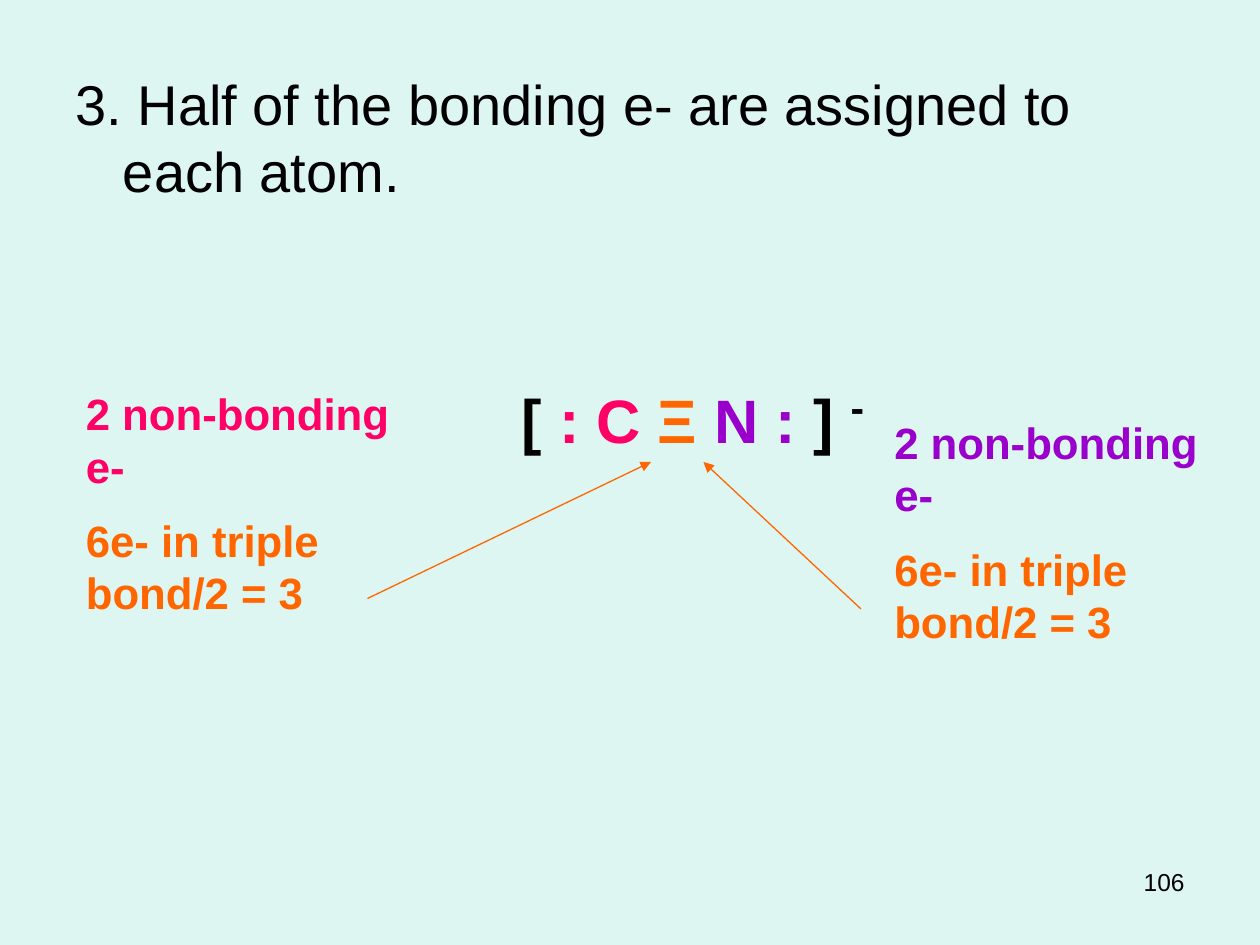
from pptx import Presentation
from pptx.dml.color import RGBColor
from pptx.enum.shapes import MSO_CONNECTOR
from pptx.enum.text import MSO_AUTO_SIZE, PP_ALIGN
from pptx.oxml.ns import qn
from pptx.util import Pt
from lxml.etree import SubElement

COLORS = {
    "background": "DEF6F1",
    "text": "000000",
    "carbon": "FF0066",
    "bond": "FF6600",
    "nitrogen": "9900CC",
}


def add_run(paragraph, text, size, color="text", bold=False):
    """Append one formatted run and return it."""
    run = paragraph.add_run()
    run.text = text
    run.font.name = "Arial"
    run.font.size = Pt(size)
    run.font.bold = bold
    run.font.color.rgb = RGBColor.from_string(COLORS[color])
    return run


def set_indent(paragraph, margin, indent):
    """Give a paragraph a left margin and first-line indent, without a bullet."""
    properties = paragraph._p.get_or_add_pPr()
    properties.set("marL", str(Pt(margin)))
    properties.set("indent", str(Pt(indent)))
    SubElement(properties, qn("a:buNone"))


def fill_body(slide, left, top, width, height):
    """Write the rule and the cyanide formula in the body placeholder."""
    body = slide.placeholders[1]
    body.left, body.top, body.width, body.height = map(Pt, (left, top, width, height))
    frame = body.text_frame
    frame.auto_size = MSO_AUTO_SIZE.NONE

    rule = frame.paragraphs[0]
    rule.space_before = Pt(6.4)
    set_indent(rule, 27, -27)
    add_run(rule, "3. Half of the bonding e- are assigned to each atom.", 32)

    formula = frame.add_paragraph()
    formula.level = 2
    formula.alignment = PP_ALIGN.CENTER
    formula.space_before = Pt(97)
    set_indent(formula, 90, -18)
    for text, color in (("[ ", "text"), (": C ", "carbon"), ("Ξ ", "bond"),
                        ("N :", "nitrogen"), (" ] ", "text")):
        add_run(formula, text, 35, color, bold=True)
    charge = add_run(formula, "-", 40, bold=True)
    charge.font._element.set("baseline", "30000")


def add_text_box(slide, left, top, width, height):
    """Add a wrapping text box and return its text frame."""
    shape = slide.shapes.add_textbox(Pt(left), Pt(top), Pt(width), Pt(height))
    shape.text_frame.word_wrap = True
    return shape.text_frame


def add_electron_count(slide, left, top, width, height, color):
    """List the electrons assigned to one atom."""
    frame = add_text_box(slide, left, top, width, height)
    lone_pair, bonding = frame.paragraphs[0], frame.add_paragraph()
    add_run(lone_pair, "2 non-bonding e-", 25, color, bold=True)
    add_run(bonding, "6e- in triple bond/2 = 3", 25, "bond", bold=True)
    for paragraph in frame.paragraphs:
        paragraph.space_before = Pt(12.5)


def add_bond_arrow(slide, start, end):
    """Draw an arrow from an electron count to the triple bond."""
    arrow = slide.shapes.add_connector(MSO_CONNECTOR.STRAIGHT, *map(Pt, start + end))
    arrow.line.color.rgb = RGBColor.from_string(COLORS["bond"])
    arrow.line.width = Pt(0.75)
    SubElement(arrow.line._get_or_add_ln(), qn("a:tailEnd"), type="triangle")
    SubElement(arrow._element.spPr, qn("a:effectLst"))


def add_slide_number(slide, left, top, width, height):
    """Place the slide number at the bottom right."""
    paragraph = add_text_box(slide, left, top, width, height).paragraphs[0]
    paragraph.alignment = PP_ALIGN.RIGHT
    add_run(paragraph, "106", 14)


def main():
    """Build the slide and save it."""
    presentation = Presentation()
    presentation.slide_width, presentation.slide_height = Pt(720), Pt(540)
    slide = presentation.slides.add_slide(presentation.slide_layouts[1])
    slide.background.fill.solid()
    slide.background.fill.fore_color.rgb = RGBColor.from_string(COLORS["background"])
    title = slide.shapes.title._element
    title.getparent().remove(title)

    add_slide_number(slide, 516, 492, 168, 37.5)
    fill_body(slide, 36, 36, 648, 446.4)
    add_electron_count(slide, 42, 217.5, 216, 142.5, "carbon")
    add_electron_count(slide, 504, 234, 216, 142.5, "nitrogen")
    add_bond_arrow(slide, (210, 342), (372, 264))
    add_bond_arrow(slide, (492, 348), (402, 264))
    presentation.save("out.pptx")


if __name__ == "__main__":
    main()
